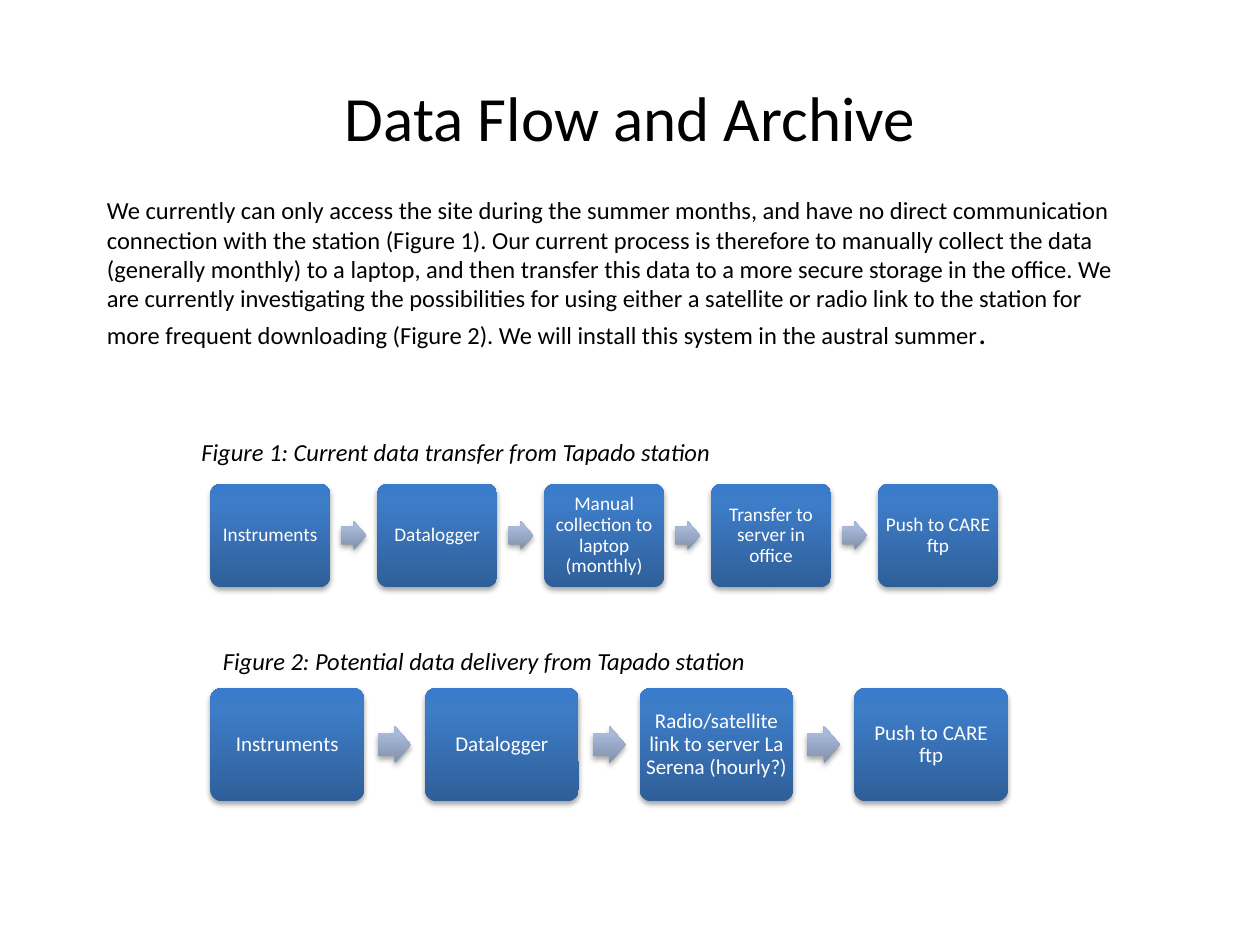
from lxml.etree import SubElement
from pptx import Presentation
from pptx.dml.color import RGBColor
from pptx.enum.shapes import MSO_SHAPE
from pptx.enum.text import MSO_ANCHOR, PP_ALIGN
from pptx.oxml import parse_xml
from pptx.oxml.ns import nsdecls, qn
from pptx.util import Inches, Pt

# Content
TITLE = "Data Flow and Archive"
INTRO = (
    "We currently can only access the site during the summer months, and have no "
    "direct communication connection with the station (Figure 1). Our current process "
    "is therefore to manually collect the data (generally monthly) to a laptop, and then "
    "transfer this data to a more secure storage in the office. We are currently "
    "investigating the possibilities for using either a satellite or radio link to the "
    "station for more frequent downloading (Figure 2). We will install this system in "
    "the austral summer"
)
FIGURES = [
    {
        "caption": "Figure 1: Current data transfer from Tapado station",
        "caption_at": (1.5, 3.42, 6.83, 0.34),
        "steps": ["Instruments", "Datalogger", "Manual collection to laptop (monthly)",
                  "Transfer to server in office", "Push to CARE ftp"],
        "row": (1.67, 7.92, 3.84),  # left, right, top
        "step_size": (0.95, 0.82),
        "arrow_size": (0.2, 0.23),
        "font_size": 11,
    },
    {
        "caption": "Figure 2: Potential data delivery from Tapado station",
        "caption_at": (1.67, 5.08, 6.33, 0.34),
        "steps": ["Instruments", "Datalogger",
                  "Radio/satellite link to server La Serena (hourly?)", "Push to CARE ftp"],
        "row": (1.67, 8.0, 5.46),
        "step_size": (1.22, 0.9),
        "arrow_size": (0.26, 0.3),
        "font_size": 12,
    },
]
STEP_GRADIENT = [(0, "2F5F99"), (80, "3D7CC7"), (100, "3A7CCB")]
ARROW_GRADIENT = [(0, "818FA8"), (80, "A7B9DA"), (100, "A7BADC")]
CORNER = 0.1
TEXT_MARGIN = 0.05


def set_font(font, size, color="000000", italic=None):
    font.name = "Calibri"
    font.size = Pt(size)
    font.italic = italic
    font.color.rgb = RGBColor.from_string(color)


def add_text(slide, at, text, size, italic=None):
    frame = slide.shapes.add_textbox(*map(Inches, at)).text_frame
    frame.word_wrap = True
    paragraph = frame.paragraphs[0]
    paragraph.add_run().text = text
    set_font(paragraph.font, size, italic=italic)
    return paragraph


def add_solid(slide, preset, at, gradient, adjustments):
    """Add a borderless shape with a vertical gradient and a soft shadow below."""
    shape = slide.shapes.add_shape(preset, *map(Inches, at))
    for index, value in enumerate(adjustments):
        shape.adjustments[index] = value
    shape.line.fill.background()
    stops = "".join(
        f'<a:gs pos="{position * 1000}"><a:srgbClr val="{color}"/></a:gs>'
        for position, color in gradient
    )
    shape.fill.background()
    properties = shape.element.spPr
    properties.replace(properties.find(qn("a:noFill")), parse_xml(
        f'<a:gradFill {nsdecls("a")} rotWithShape="1"><a:gsLst>{stops}</a:gsLst>'
        '<a:lin ang="16200000" scaled="0"/></a:gradFill>'))
    shape.shadow.inherit = False
    shadow = SubElement(properties.find(qn("a:effectLst")), qn("a:outerShdw"),
                        blurRad=str(Pt(3.1)), dist=str(Pt(1.8)), dir="5400000",
                        rotWithShape="0")
    color = SubElement(shadow, qn("a:srgbClr"), val="000000")
    SubElement(color, qn("a:alpha"), val="35000")
    return shape


def add_step(slide, at, text, size):
    step = add_solid(slide, MSO_SHAPE.ROUNDED_RECTANGLE, at, STEP_GRADIENT, [CORNER])
    frame = step.text_frame
    frame.word_wrap = True
    frame.vertical_anchor = MSO_ANCHOR.MIDDLE
    # A rounded rectangle already insets its text by 0.29 of the corner radius
    margin = Inches(TEXT_MARGIN - 0.29 * CORNER * min(at[2:]))
    frame.margin_left = frame.margin_right = margin
    frame.margin_top = frame.margin_bottom = margin
    paragraph = frame.paragraphs[0]
    paragraph.text = text
    paragraph.alignment = PP_ALIGN.CENTER
    paragraph.line_spacing = 0.9
    set_font(paragraph.font, size, "FFFFFF")


def add_flow(slide, figure):
    left, right, top = figure["row"]
    width, height = figure["step_size"]
    arrow_width, arrow_height = figure["arrow_size"]
    steps = figure["steps"]
    pitch = (right - left - width) / (len(steps) - 1)
    for index, text in enumerate(steps):
        x = left + index * pitch
        add_step(slide, (x, top, width, height), text, figure["font_size"])
        if index < len(steps) - 1:
            # Centre the arrow in the gap to the next step
            arrow_x = x + (width + pitch - arrow_width) / 2
            arrow_y = top + (height - arrow_height) / 2
            add_solid(slide, MSO_SHAPE.RIGHT_ARROW,
                      (arrow_x, arrow_y, arrow_width, arrow_height),
                      ARROW_GRADIENT, [0.6, 0.5])


def main():
    presentation = Presentation()
    presentation.slide_width = Inches(10)
    presentation.slide_height = Inches(7.5)
    slide = presentation.slides.add_slide(presentation.slide_layouts[5])

    # Title
    title = slide.shapes.title
    title.left, title.top, title.width, title.height = map(Inches, (0.5, 0.3, 9, 1.25))
    title.text_frame.vertical_anchor = MSO_ANCHOR.MIDDLE
    heading = title.text_frame.paragraphs[0]
    heading.text = TITLE
    heading.alignment = PP_ALIGN.CENTER
    set_font(heading.font, 36)

    # Introduction, closed by a larger full stop
    intro = add_text(slide, (0.75, 1.5, 8.25, 1.58), INTRO, 14)
    full_stop = intro.add_run()
    full_stop.text = "."
    full_stop.font.size = Pt(18)

    # Figures
    for figure in FIGURES:
        add_flow(slide, figure)
        add_text(slide, figure["caption_at"], figure["caption"], 14, italic=True)

    presentation.save("out.pptx")


if __name__ == "__main__":
    main()
